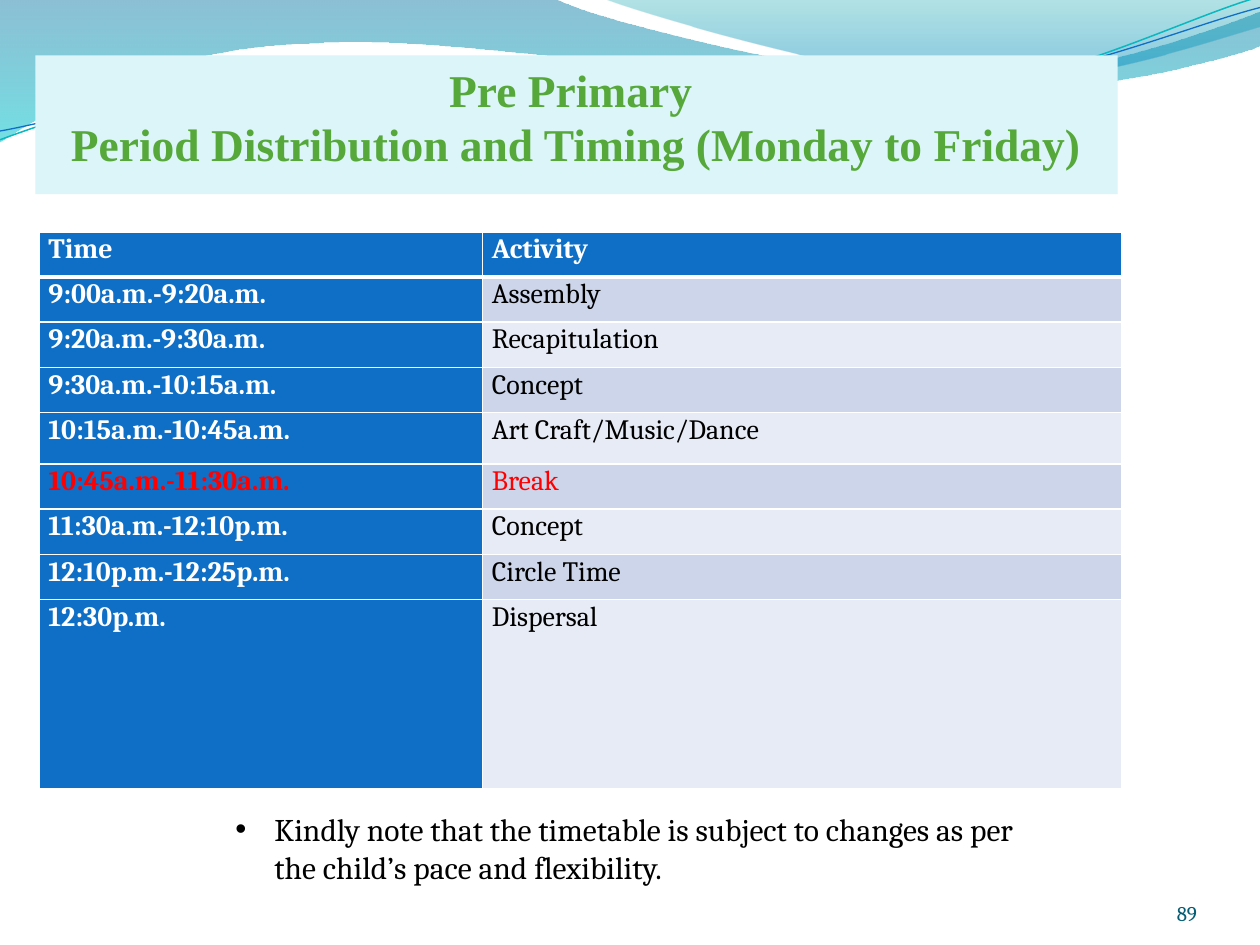
import lxml.etree
import pptx
import pptx.dml.color
import pptx.enum.text
import pptx.oxml
import pptx.oxml.ns
import pptx.util

Inches = pptx.util.Inches
Pt = pptx.util.Pt
RGBColor = pptx.dml.color.RGBColor
qn = pptx.oxml.ns.qn

WHITE = RGBColor(0xFF, 0xFF, 0xFF)
BLACK = RGBColor(0x00, 0x00, 0x00)
RED = RGBColor(0xFF, 0x00, 0x00)
BLUE = RGBColor(0x0F, 0x6F, 0xC6)
TEAL = RGBColor(0x0A, 0xB8, 0xBF)
GREEN = RGBColor(0x55, 0xA8, 0x39)
PALE_CYAN = RGBColor(0xDB, 0xF5, 0xF9)
DARK_TEAL = RGBColor(0x04, 0x5D, 0x75)
BANDS = (RGBColor(0xCC, 0xD5, 0xEA), RGBColor(0xE7, 0xEB, 0xF5))
DEEP_BLUE = RGBColor(0x00, 0x74, 0xA1)
AQUA = RGBColor(0x00, 0xC6, 0xCF)
SEA = RGBColor(0x00, 0xA1, 0xA9)
SKY = RGBColor(0x00, 0x8B, 0xBF)

BODY_FONT = "Cambria"
TITLE_FONT = "Times New Roman"

LEFT_WAVE = [
    (0, 0), (4.4, -0.01), (4.76, 0.17, 6.64, 0.63, 7.58, 0.63),
    (8.53, 0.63, 9.58, 0.26, 10, 0.09), (10.01, 0.36),
    (9.83, 0.44, 8.7, 0.76, 7.46, 0.75), (6.22, 0.75, 3.82, 0.28, 2.57, 0.34),
    (1.29, 0.36, 0.46, 0.83, -0.01, 1.13),
]
RIGHT_WAVE = [
    (4.79, -0.01), (5.09, 0.11, 6.82, 0.62, 7.69, 0.65),
    (8.56, 0.69, 9.61, 0.32, 10, 0.21), (10, 0),
]
TEAL_CURVE = [
    (0, 1.11), (0.48, 0.93, 1.58, 0.57, 2.77, 0.52),
    (3.95, 0.47, 5.93, 0.89, 7.13, 0.8), (8.33, 0.71, 9.38, 0.15, 9.98, -0.02),
]
BLUE_CURVE = [
    (0, 1.04), (0.47, 0.96, 1.64, 0.61, 2.83, 0.56),
    (4.03, 0.51, 5.97, 0.84, 7.17, 0.75), (8.36, 0.67, 9.41, 0.21, 10, 0.06),
]
TIMETABLE = [
    ("Time", "Activity"),
    ("9:00a.m.-9:20a.m.", "Assembly"),
    ("9:20a.m.-9:30a.m.", "Recapitulation"),
    ("9:30a.m.-10:15a.m.", "Concept"),
    ("10:15a.m.-10:45a.m.", "Art Craft/Music/Dance"),
    ("10:45a.m.-11:30a.m.", "Break"),
    ("11:30a.m.-12:10p.m.", "Concept"),
    ("12:10p.m.-12:25p.m.", "Circle Time"),
    ("12:30p.m.", "Dispersal"),
]
TABLE_HEIGHT = 4.42
TALL_ROWS = {4: 0.41, 8: 1.5}
ROW_HEIGHT = (TABLE_HEIGHT - sum(TALL_ROWS.values())) / (len(TIMETABLE) - len(TALL_ROWS))
COLUMN_WIDTHS = [3.52, 5.07]


def add_run(paragraph, text, size, color, bold=False, font=BODY_FONT):
    """Add one formatted run to a paragraph."""
    run = paragraph.add_run()
    run.text = text
    run.font.name = font
    run.font.size = Pt(size)
    run.font.bold = bold
    run.font.color.rgb = color


def add_outline(slide, segments, close):
    """Add a freeform of straight lines and cubic curves."""
    anchors = [(Inches(segment[-2]), Inches(segment[-1])) for segment in segments]
    builder = slide.shapes.build_freeform(*anchors[0], scale=1.0)
    builder.add_line_segments(anchors[1:], close=close)
    shape = builder.convert_to_shape()
    shape.shadow.inherit = False
    lines = list(shape._element.iter(qn("a:lnTo")))
    for line, segment in zip(lines, segments[1:]):
        if len(segment) == 6:
            line.tag = qn("a:cubicBezTo")
            for index in (0, 2):
                point = lxml.etree.Element(qn("a:pt"))
                point.set("x", str(Inches(segment[index]) - shape.left))
                point.set("y", str(Inches(segment[index + 1]) - shape.top))
                line.insert(index // 2, point)
    return shape


def add_wave(slide, segments, stops):
    """Add a wave with a translucent gradient running downwards."""
    shape = add_outline(slide, segments, True)
    shape.line.fill.background()
    shape.fill.gradient()
    shape.fill.gradient_angle = 270
    for stop, (position, color, opacity) in zip(shape.fill.gradient_stops, stops):
        stop.color.rgb = color
        stop.position = position
    colors = shape.fill._xPr.iter(qn("a:srgbClr"))
    for element, (position, color, opacity) in zip(colors, stops):
        for child in list(element):
            element.remove(child)
        lxml.etree.SubElement(element, qn("a:alpha")).set("val", str(opacity * 1000))


def add_curve(slide, segments, color, width):
    """Add a thin open curve."""
    shape = add_outline(slide, segments, False)
    shape.fill.background()
    shape.line.color.rgb = color
    shape.line.width = Pt(width)


def set_borders(cell, bottom_width):
    """Give a cell white borders."""
    properties = cell._tc.get_or_add_tcPr()
    for side, width in (("L", 1), ("R", 1), ("T", 1), ("B", bottom_width)):
        line = lxml.etree.SubElement(properties, qn("a:ln" + side))
        line.set("w", str(Pt(width)))
        fill = lxml.etree.SubElement(line, qn("a:solidFill"))
        lxml.etree.SubElement(fill, qn("a:srgbClr")).set("val", str(WHITE))


def fill_cell(cell, text, fill, color, bold, bottom_width):
    """Write and format one timetable cell."""
    set_borders(cell, bottom_width)
    cell.fill.solid()
    cell.fill.fore_color.rgb = fill
    cell.margin_left = cell.margin_right = Pt(5.4)
    cell.margin_top = cell.margin_bottom = 0
    paragraph = cell.text_frame.paragraphs[0]
    paragraph.line_spacing = 1.05
    add_run(paragraph, text, 16, color, bold)


def add_timetable(slide):
    """Add the table of times and activities."""
    table = slide.shapes.add_table(
        len(TIMETABLE), len(COLUMN_WIDTHS), Inches(0.31), Inches(1.84),
        Inches(sum(COLUMN_WIDTHS)), Inches(TABLE_HEIGHT),
    ).table
    for column, width in zip(table.columns, COLUMN_WIDTHS):
        column.width = Inches(width)
    for row_index, texts in enumerate(TIMETABLE):
        table.rows[row_index].height = Inches(TALL_ROWS.get(row_index, ROW_HEIGHT))
        header = row_index == 0
        for column_index, text in enumerate(texts):
            strong = header or column_index == 0
            fill = BLUE if strong else BANDS[(row_index - 1) % 2]
            color = RED if "Break" in texts else WHITE if strong else BLACK
            fill_cell(table.cell(row_index, column_index), text, fill, color,
                      strong, 3 if header else 1)


def add_note(slide):
    """Add the bulleted note below the timetable."""
    box = slide.shapes.add_textbox(Inches(1.77), Inches(5.48), Inches(6.54), Inches(2.22))
    box.text_frame.word_wrap = True
    box.text_frame.margin_top = Inches(0.95)
    paragraph = box.text_frame.paragraphs[0]
    properties = paragraph._p.get_or_add_pPr()
    properties.set("marL", str(Inches(0.31)))
    properties.set("indent", str(Inches(-0.31)))
    lxml.etree.SubElement(properties, qn("a:buFont")).set("typeface", "Arial")
    lxml.etree.SubElement(properties, qn("a:buChar")).set("char", "•")
    add_run(paragraph, "Kindly note that the timetable is subject to changes as per "
            "the child’s pace and flexibility.", 18, BLACK)


def add_page_number(slide):
    """Add the page number in the bottom right corner."""
    box = slide.shapes.add_textbox(Inches(8.67), Inches(6.95), Inches(0.83), Inches(0.4))
    frame = box.text_frame
    frame.word_wrap = True
    frame.margin_left = frame.margin_right = frame.margin_top = frame.margin_bottom = 0
    frame.vertical_anchor = pptx.enum.text.MSO_ANCHOR.BOTTOM
    frame.paragraphs[0].alignment = pptx.enum.text.PP_ALIGN.RIGHT
    add_run(frame.paragraphs[0], "89", 12, DARK_TEAL)


def set_title(slide):
    """Format the title and bring it in front of the waves."""
    title = slide.shapes.title
    title.left, title.top = Inches(0.28), Inches(0.44)
    title.width, title.height = Inches(8.59), Inches(1.1)
    title.fill.solid()
    title.fill.fore_color.rgb = PALE_CYAN
    frame = title.text_frame
    frame.auto_size = pptx.enum.text.MSO_AUTO_SIZE.NONE
    frame.vertical_anchor = pptx.enum.text.MSO_ANCHOR.TOP
    frame.margin_top = Inches(0.05)
    lines = ("Pre Primary ", "Period Distribution and Timing (Monday to Friday)")
    for index, text in enumerate(lines):
        paragraph = frame.add_paragraph() if index else frame.paragraphs[0]
        paragraph.alignment = pptx.enum.text.PP_ALIGN.CENTER
        paragraph.space_before = Pt(0)
        add_run(paragraph, text, 26, GREEN, True, TITLE_FONT)
    slide.shapes._spTree.append(title._element)


def main():
    """Build the timetable slide."""
    presentation = pptx.Presentation()
    presentation.slide_width, presentation.slide_height = Inches(10), Inches(7.5)
    slide = presentation.slides.add_slide(presentation.slide_layouts[5])
    add_wave(slide, LEFT_WAVE, [(0, DEEP_BLUE, 45), (1, AQUA, 55)])
    add_wave(slide, RIGHT_WAVE, [(0, SEA, 30), (0.8, SKY, 45)])
    add_curve(slide, TEAL_CURVE, TEAL, 0.85)
    add_curve(slide, BLUE_CURVE, BLUE, 0.75)
    add_page_number(slide)
    add_timetable(slide)
    add_note(slide)
    set_title(slide)
    presentation.save("out.pptx")


if __name__ == "__main__":
    main()
